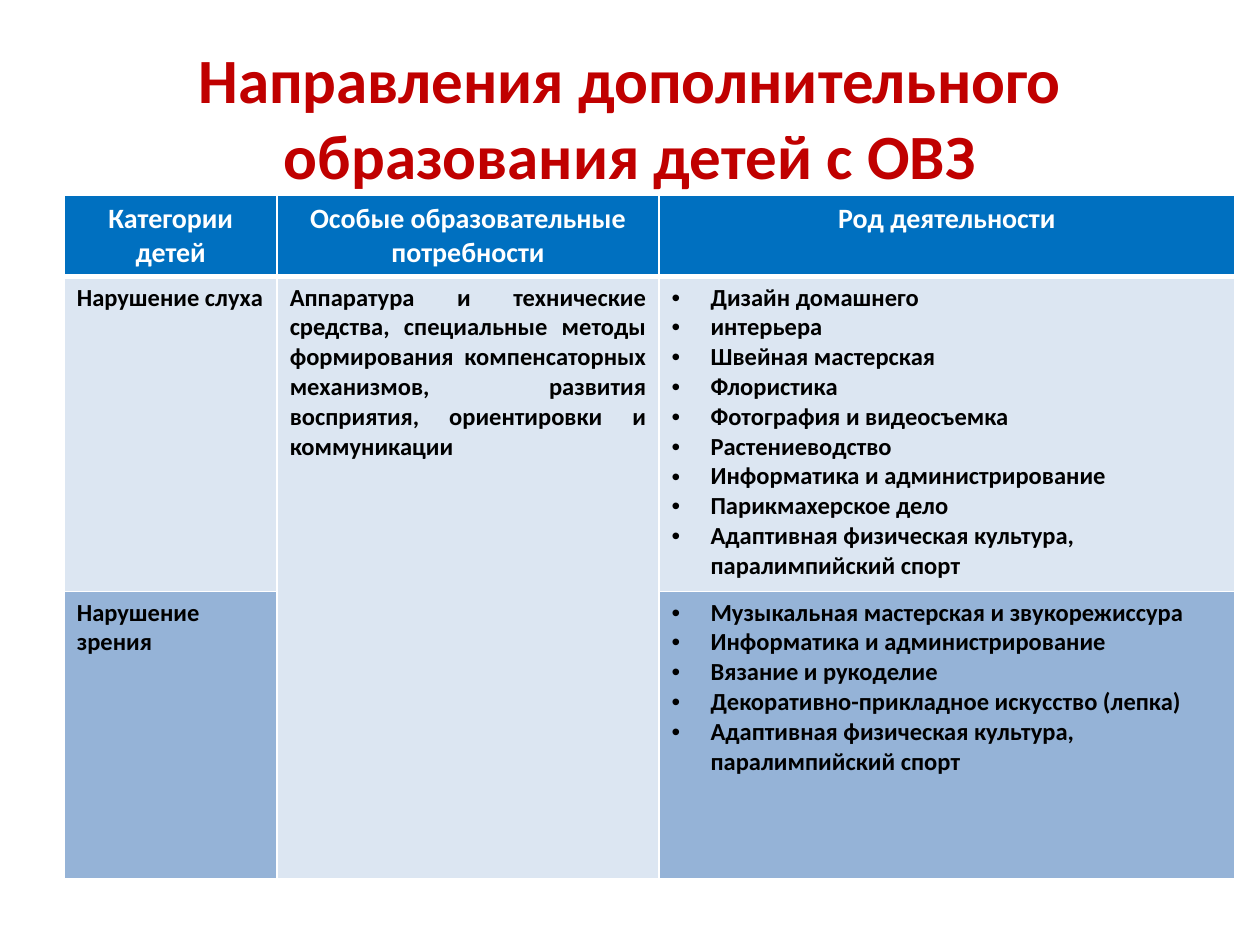
from lxml import etree
from pptx import Presentation
from pptx.dml.color import RGBColor
from pptx.enum.text import MSO_ANCHOR, PP_ALIGN
from pptx.oxml.ns import qn
from pptx.util import Inches, Pt

CENTER, LEFT, JUSTIFY = PP_ALIGN.CENTER, PP_ALIGN.LEFT, PP_ALIGN.JUSTIFY
MIDDLE = MSO_ANCHOR.MIDDLE
TITLE_ONLY = 5


def style(para, size, color, align):
    para.alignment = align
    para.font.name = "Calibri"
    para.font.size = Pt(size)
    para.font.bold = True
    para.font.color.rgb = RGBColor.from_string(color)


def add_border(cell, side, width):
    line = etree.SubElement(cell._tc.get_or_add_tcPr(), qn(f"a:ln{side}"), w=str(Pt(width)))
    fill = etree.SubElement(line, qn("a:solidFill"))
    etree.SubElement(fill, qn("a:srgbClr"), val="FFFFFF")


deck = Presentation()
deck.slide_width, deck.slide_height = Inches(10), Inches(7.5)
page = deck.slides.add_slide(deck.slide_layouts[TITLE_ONLY])

# Title
title = page.shapes.title
title.left, title.top = Inches(0.5), Inches(0.3)
title.width, title.height = Inches(9), Inches(1.25)
title.text_frame.vertical_anchor = MIDDLE
title.text_frame.text = "Направления дополнительного образования детей с ОВЗ"
style(title.text_frame.paragraphs[0], 36, "C00000", CENTER)

# Table content: each cell is a list of paragraphs
rows = [
    [["Категории детей"], ["Особые образовательные потребности"], ["Род деятельности"]],
    [
        ["Нарушение слуха"],
        ["Аппаратура и технические средства, специальные методы формирования "
         "компенсаторных механизмов, развития восприятия, ориентировки и коммуникации"],
        ["Дизайн домашнего", "интерьера", "Швейная мастерская", "Флористика",
         "Фотография и видеосъемка", "Растениеводство",
         "Информатика и администрирование", "Парикмахерское дело",
         "Адаптивная физическая культура, паралимпийский спорт"],
    ],
    [
        ["Нарушение зрения"],
        [],
        ["Музыкальная мастерская и звукорежиссура", "Информатика и администрирование",
         "Вязание и рукоделие", "Декоративно-прикладное искусство (лепка)",
         "Адаптивная физическая культура, паралимпийский спорт"],
    ],
]
column_widths = [1.69, 3.03, 4.57]
row_heights = [0.63, 2.5, 2.28]
row_fills = ["0070C0", "DCE6F2", "95B3D7"]
body_aligns = [LEFT, JUSTIFY, LEFT]

# Table grid
table = page.shapes.add_table(
    len(rows), len(column_widths), Inches(0.51), Inches(1.55),
    Inches(sum(column_widths)), Inches(sum(row_heights))).table
for column, width in zip(table.columns, column_widths):
    column.width = Inches(width)
for row, height in zip(table.rows, row_heights):
    row.height = Inches(height)
table.cell(1, 1).merge(table.cell(2, 1))

# Cells
for r, row in enumerate(rows):
    for c, lines in enumerate(row):
        cell = table.cell(r, c)
        is_header = r == 0
        border_widths = {"L": 1, "R": 1, "T": 3 if r == 1 else 1, "B": 3 if is_header else 1}
        for side, width in border_widths.items():
            add_border(cell, side, width)
        cell.fill.solid()
        cell.fill.fore_color.rgb = RGBColor.from_string(row_fills[r])
        if not lines:
            continue
        cell.text = "\n".join(lines)
        for para in cell.text_frame.paragraphs:
            if is_header:
                style(para, 16, "FFFFFF", CENTER)
                continue
            style(para, 14, "000000", body_aligns[c])
            if c == 2:
                properties = para._p.get_or_add_pPr()
                properties.set("marL", str(Inches(0.31)))
                properties.set("indent", str(-Inches(0.31)))
                bullet_font = etree.Element(qn("a:buFont"), typeface="Arial")
                bullet = etree.Element(qn("a:buChar"), char="•")
                properties.insert(0, bullet_font)
                properties.insert(1, bullet)

deck.save("out.pptx")
